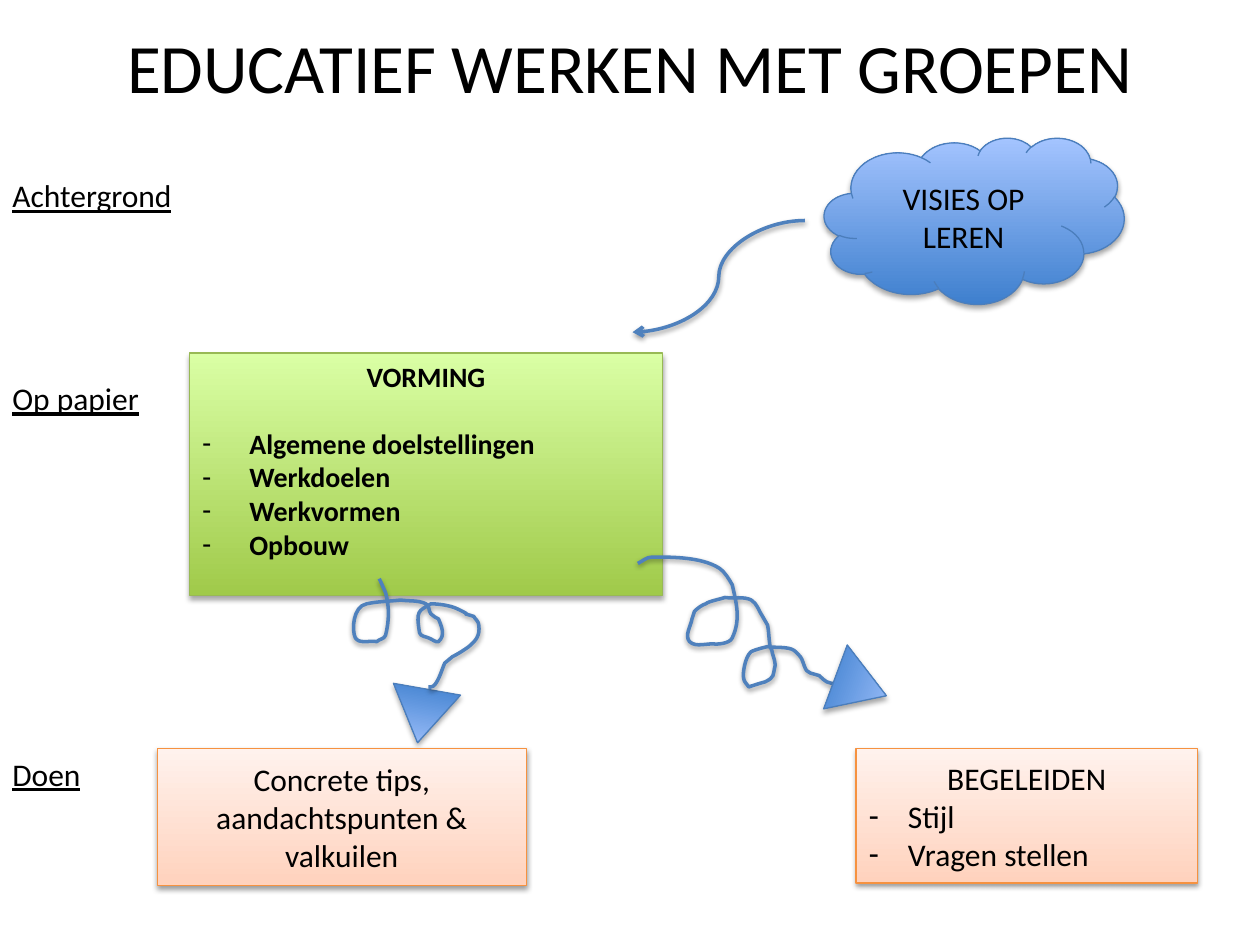
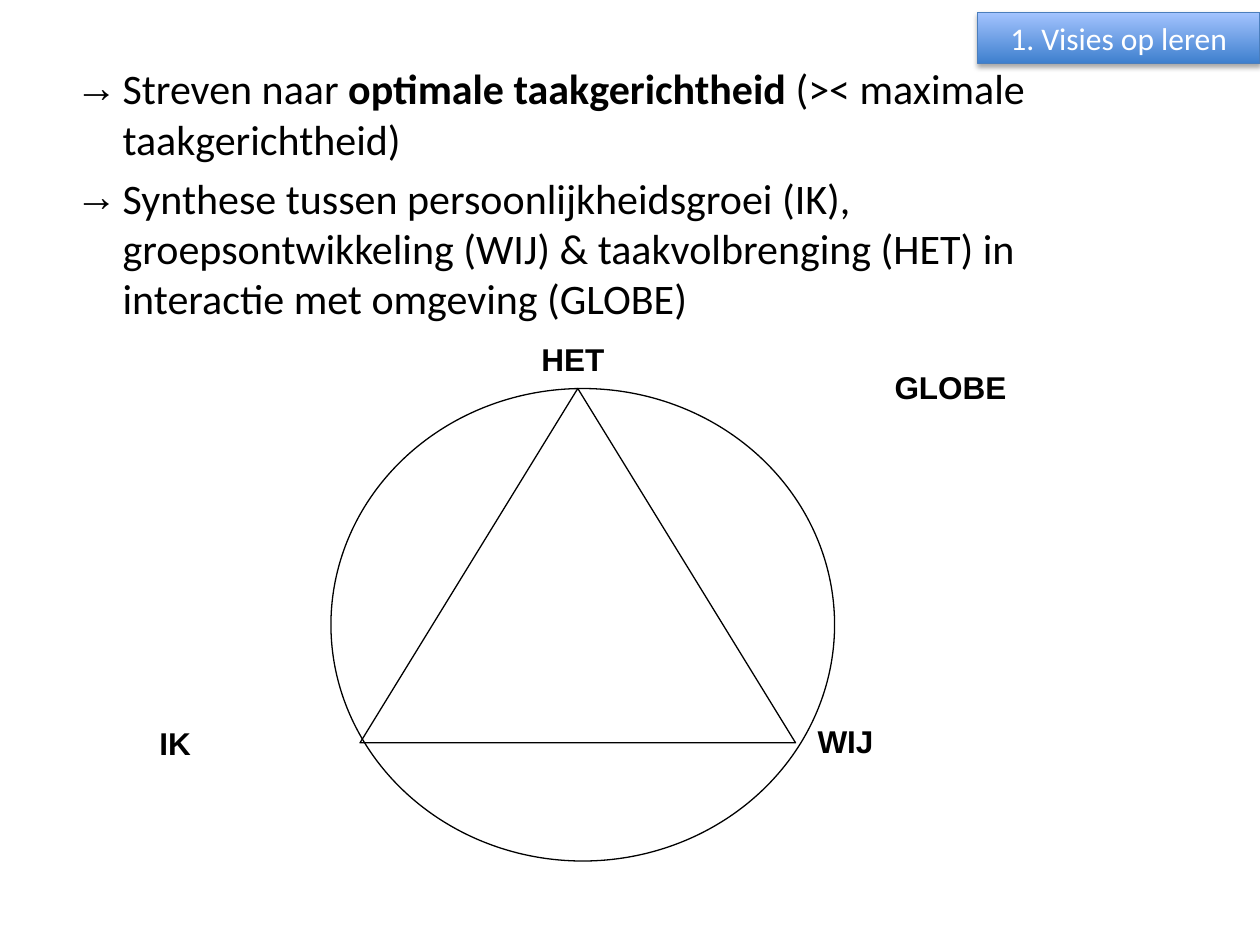
from collections import namedtuple

from lxml.etree import SubElement
from pptx import Presentation
from pptx.dml.color import RGBColor
from pptx.enum.shapes import MSO_CONNECTOR as CONN, MSO_SHAPE as SHAPE
from pptx.enum.text import MSO_ANCHOR as ANCHOR, PP_ALIGN as ALIGN
from pptx.oxml.ns import qn
from pptx.util import Pt

Box = namedtuple("Box", "x y w h")
Style = namedtuple("Style", "bottom top line shadow")

BLACK, WHITE, STROKE = "000000", "FFFFFF", "4F81BD"
SOFT = (38, 1.6)  # opacity in percent, distance in points
DEEP = (35, 1.8)
BLUE = Style("3F80CE", "A4C4FF", "4B7EBC", DEEP)
GREEN = Style("A0CA4A", "DAFFA5", "98B955", DEEP)
ORANGE = Style("FFD2BD", "FFF2ED", "F69240", SOFT)

GRID = 0.72  # points per unit of the squiggle outlines
# Each outline starts with a point; six numbers make a curve, two a straight line.
SQUIGGLE_TO_TIPS = [
    (21, 0), (23, 4, 24, 7, 26, 11), (29, 22, 29, 33, 26, 45),
    (25, 48, 21, 48, 19, 50), (13, 49, 5, 52, 2, 47), (-1, 41, 0, 22, 11, 20),
    (20, 18, 29, 18, 38, 17), (45, 18, 52, 17, 58, 20), (61, 21, 60, 26, 62, 28),
    (64, 30, 66, 31, 68, 32), (70, 37, 74, 45, 68, 50), (66, 51, 63, 48, 60, 47),
    (58, 46, 54, 46, 53, 43), (50, 25, 52, 26, 62, 20), (67, 20, 77, 21, 83, 24),
    (100, 32, 80, 25, 96, 30), (97, 32, 100, 34, 100, 37),
    (101, 45, 98, 49, 92, 54), (88, 57, 83, 60, 79, 62), (73, 67),
    (71, 71, 67, 86, 62, 86), (60, 86),
]
SQUIGGLE_TO_GUIDING = [
    (0, 5), (4, 3, 7, 0, 11, 0), (22, 0, 50, -1, 65, 9), (70, 13, 72, 17, 75, 22),
    (78, 36, 82, 49, 75, 64), (73, 69, 62, 69, 62, 69), (55, 68, 46, 72, 41, 67),
    (37, 62, 42, 55, 43, 49), (44, 47, 44, 45, 45, 43), (48, 40, 51, 38, 54, 37),
    (56, 35, 67, 33, 69, 32), (76, 33, 84, 31, 90, 34), (95, 37, 96, 43, 99, 47),
    (103, 54), (104, 59, 104, 65, 105, 71), (106, 73, 107, 75, 107, 77),
    (108, 80, 109, 83, 109, 86), (107, 94, 109, 95, 101, 99),
    (97, 100, 88, 103, 88, 103), (87, 101, 84, 99, 84, 96),
    (83, 93, 85, 79, 90, 75), (94, 73, 103, 71, 103, 71),
    (109, 72, 116, 71, 122, 73), (125, 74, 127, 77, 129, 79),
    (132, 83, 132, 91, 137, 92), (144, 94), (146, 96, 148, 98, 150, 99),
    (158, 102, 167, 101, 173, 101),
]


def rgb(value):
    return RGBColor.from_string(value)


def emu(box):
    return [Pt(v) for v in box]


def set_shadow(s, shadow=None):
    """Replace the theme shadow by the given one, or by none; call it after the line is set."""
    effects = SubElement(s._element.spPr, qn("a:effectLst"))
    if shadow:
        opacity, distance = shadow
        outer = SubElement(effects, qn("a:outerShdw"), blurRad=str(Pt(3.1)),
                           dist=str(Pt(distance)), dir="5400000", rotWithShape="0")
        color = SubElement(outer, qn("a:srgbClr"), val=BLACK)
        SubElement(color, qn("a:alpha"), val=str(opacity * 1000))


def set_line(s, color, width):
    s.line.color.rgb = rgb(color)
    s.line.width = Pt(width)


def add_bullet(p, char, indent):
    pPr = p._p.get_or_add_pPr()
    pPr.set("marL", str(Pt(indent)))
    pPr.set("indent", str(-Pt(indent)))
    SubElement(pPr, qn("a:buFont"), typeface="Arial")
    SubElement(pPr, qn("a:buChar"), char=char)


def add_paragraph(tf, text, size=18, color=BLACK, name="Calibri", align=ALIGN.LEFT,
                  bullet=None, indent=0, before=0, after=0, **font):
    """Fill the first empty paragraph or add one; text is a string or (string, bold) pairs."""
    p = tf.paragraphs[0]
    if p.runs:
        p = tf.add_paragraph()
    for key, value in dict(alignment=align, space_before=Pt(before),
                           space_after=Pt(after)).items():
        setattr(p, key, value)
    if bullet:
        add_bullet(p, bullet, indent)
    pieces = [(text, font.get("bold", False))] if isinstance(text, str) else text
    for piece, bold in pieces:
        r = p.add_run()
        r.text = piece
        r.font.color.rgb = rgb(color)
        for key, value in {**font, "name": name, "size": Pt(size), "bold": bold}.items():
            setattr(r.font, key, value)


def add_text(slide, box, text=None, anchor=ANCHOR.TOP, wrap=True, **fmt):
    tf = slide.shapes.add_textbox(*emu(box)).text_frame
    tf.word_wrap, tf.vertical_anchor = wrap, anchor
    if text:
        add_paragraph(tf, text, **fmt)
    return tf


def add_gradient_shape(slide, kind, box, style, text=None, rotation=0, **fmt):
    s = slide.shapes.add_shape(kind, *emu(box))
    s.rotation = rotation
    s.fill.gradient()
    s.fill.gradient_angle = 90
    for stop, color, position in zip(s.fill.gradient_stops, style[:2], (0, 1)):
        stop.color.rgb = rgb(color)
        stop.position = position
    set_line(s, style.line, 0.75)
    set_shadow(s, style.shadow)
    s.text_frame.vertical_anchor = ANCHOR.MIDDLE
    if text:
        add_paragraph(s.text_frame, text, align=ALIGN.CENTER, **fmt)
    return s.text_frame


def add_outline(slide, kind, box):
    s = slide.shapes.add_shape(kind, *emu(box))
    s.fill.background()
    set_line(s, BLACK, 0.75)
    set_shadow(s)


def bend(s, segments):
    """Join each three line ends that belong to a curve into one Bezier segment."""
    ends = iter(list(s._element.iter(qn("a:lnTo"))))
    for segment in segments:
        first = next(ends)
        if len(segment) == 6:
            first.tag = qn("a:cubicBezTo")
            for _ in range(2):
                end = next(ends)
                first.append(end[0])
                end.getparent().remove(end)


def squiggle(slide, x, y, outline):
    start, *rest = [(Pt(x + GRID * segment[i]), Pt(y + GRID * segment[i + 1]))
                    for segment in outline for i in range(0, len(segment), 2)]
    builder = slide.shapes.build_freeform(*start)
    builder.add_line_segments(rest, close=False)
    s = builder.convert_to_shape()
    bend(s, outline[1:])
    s.fill.background()
    set_line(s, STROKE, 2)
    set_shadow(s, SOFT)


def curved_arrow(slide, x1, y1, x2, y2):
    s = slide.shapes.add_connector(CONN.CURVE, Pt(x1), Pt(y1), Pt(x2), Pt(y2))
    set_line(s, STROKE, 2)
    SubElement(s._element.spPr.find(qn("a:ln")), qn("a:tailEnd"), type="arrow")
    set_shadow(s, SOFT)


def training_box(slide, box):
    tf = add_gradient_shape(slide, SHAPE.RECTANGLE, box, GREEN, "VORMING",
                            size=16, bold=True, after=19.2)
    tf.vertical_anchor = ANCHOR.TOP
    for item in ("Algemene doelstellingen", "Werkdoelen", "Werkvormen", "Opbouw"):
        add_paragraph(tf, item, size=16, bold=True, bullet="-", indent=27)


def guiding_box(slide, box):
    tf = add_gradient_shape(slide, SHAPE.RECTANGLE, box, ORANGE, "BEGELEIDEN")
    for item in ("Stijl", "Vragen stellen"):
        add_paragraph(tf, item, bullet="-", indent=22.5)


def overview_slide(slide):
    add_text(slide, Box(36, 0, 648, 75.6), "EDUCATIEF WERKEN MET GROEPEN",
             anchor=ANCHOR.MIDDLE, size=39.6, align=ALIGN.CENTER)
    training_box(slide, Box(108.4, 201.7, 270, 138.5))
    curved_arrow(slide, 460, 126, 361.5, 189.8)
    add_gradient_shape(slide, SHAPE.CLOUD, Box(471, 78.7, 171.4, 95), BLUE,
                       "VISIES OP LEREN")
    squiggle(slide, 364.5, 318.4, SQUIGGLE_TO_GUIDING)
    for x, y, rotation in ((472.5, 376.7, 110.3), (221.8, 393.6, 190)):
        add_gradient_shape(slide, SHAPE.ISOSCELES_TRIANGLE, Box(x, y, 38.9, 31), BLUE,
                           rotation=rotation)
    guiding_box(slide, Box(489.2, 427.7, 195, 77))
    add_gradient_shape(slide, SHAPE.RECTANGLE, Box(89.9, 427.7, 210.8, 78.5), ORANGE,
                       "Concrete tips, aandachtspunten & valkuilen")
    squiggle(slide, 201.6, 330.7, SQUIGGLE_TO_TIPS)
    for label, y, w, wrap in (("Achtergrond", 97.2, 131, True),
                              ("Op papier", 213.1, 88, False),
                              ("Doen", 427.7, 54, False)):
        add_text(slide, Box(0, y, w, 29), label, wrap=wrap, underline=True)


def theme_triangle(slide, box):
    """Triangle in a circle; the box is that of the circle."""
    x, y, w, h = box
    add_outline(slide, SHAPE.OVAL, box)
    add_outline(slide, SHAPE.ISOSCELES_TRIANGLE,
                Box(x + 16.6, y, w - 38.9, 0.75 * h))
    for label, dx, dy, align in (("HET", 82.8, -31.2, ALIGN.CENTER),
                                 ("IK", -105.1, 188, ALIGN.LEFT),
                                 ("WIJ", 271, 187, ALIGN.LEFT),
                                 ("GLOBE", 298.6, -15.4, ALIGN.CENTER)):
        add_text(slide, Box(x + dx, y + dy, 111, 25), label, name="Arial",
                 bold=True, align=align)


def vision_slide(slide):
    tf = add_text(slide, Box(36, 32.4, 648, 450))
    for text in ([("Streven naar ", False), ("optimale taakgerichtheid ", True),
                  ("(>< maximale taakgerichtheid)", False)],
                 "Synthese tussen persoonlijkheidsgroei (IK), groepsontwikkeling (WIJ) "
                 "& taakvolbrenging (HET) in interactie met omgeving (GLOBE)"):
        add_paragraph(tf, text, size=24, bullet="→", indent=27, before=4.8)
    theme_triangle(slide, Box(189.1, 222, 287.8, 270))
    add_gradient_shape(slide, SHAPE.RECTANGLE, Box(558.5, 7, 161.5, 29.2), BLUE,
                       "1. Visies op leren", color=WHITE)


def main():
    prs = Presentation()
    prs.slide_width, prs.slide_height = Pt(720), Pt(540)
    for build in (overview_slide, vision_slide):
        build(prs.slides.add_slide(prs.slide_layouts[6]))
    prs.save("out.pptx")


if __name__ == "__main__":
    main()
